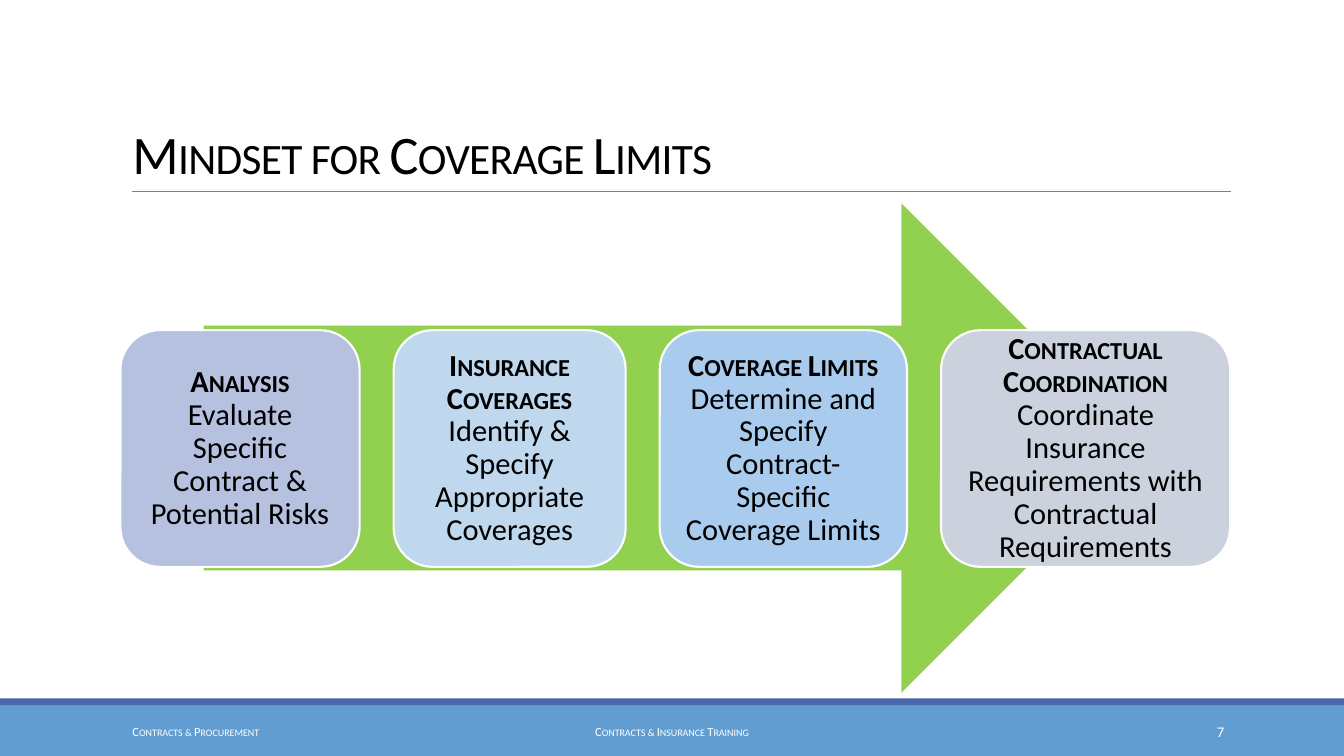
from dataclasses import dataclass

from lxml import etree
from pptx import Presentation
from pptx.dml.color import RGBColor
from pptx.enum.shapes import MSO_CONNECTOR, MSO_SHAPE
from pptx.enum.text import MSO_ANCHOR, PP_ALIGN
from pptx.oxml.ns import qn
from pptx.util import Cm, Pt

RECT, CARD, ARROW = MSO_SHAPE.RECTANGLE, MSO_SHAPE.ROUNDED_RECTANGLE, MSO_SHAPE.RIGHT_ARROW
STRAIGHT = MSO_CONNECTOR.STRAIGHT
LEFT, CENTER, RIGHT = PP_ALIGN.LEFT, PP_ALIGN.CENTER, PP_ALIGN.RIGHT
MIDDLE, BOTTOM = MSO_ANCHOR.MIDDLE, MSO_ANCHOR.BOTTOM


@dataclass(frozen=True)
class Theme:
    font: str = "Calibri"
    text: str = "000000"
    light: str = "FFFFFF"
    rule: str = "808080"
    arrow: str = "92D050"
    footer: str = "629DD1"
    stripe: str = "4A66AC"
    title_size: float = 32
    card_size: float = 18
    footer_size: float = 7.4
    number_size: float = 8.7


THEME = Theme()
SLIDE_W, SLIDE_H = 27.99, 15.75
CARDS_LEFT, CARDS_TOP, CARD_H, CARD_GAP = 2.51, 6.88, 4.93, 0.71

# width, fill, heading, body
STEPS = [
    (4.98, "B5C1DF", "Analysis", "Evaluate Specific Contract & Potential Risks"),
    (4.83, "C0D8ED", "Insurance Coverages", "Identify & Specify Appropriate Coverages"),
    (5.15, "A9CCEE", "Coverage Limits",
     "Determine and Specify Contract-Specific Coverage Limits"),
    (6.02, "CCD2DD", "Contractual Coordination",
     "Coordinate Insurance Requirements with Contractual Requirements"),
]

# left, width, text, alignment, size, small caps
FOOTERS = [
    (2.51, 5.66, "Contracts & Procurement", LEFT, THEME.footer_size, True),
    (8.46, 11.07, "Contracts & Insurance Training", CENTER, THEME.footer_size, True),
    (22.73, 3.02, "7", RIGHT, THEME.number_size, False),
]


def rgb(color):
    return RGBColor.from_string(color)


def set_font(font, size, color):
    font.name = THEME.font
    font.size = Pt(size)
    font.color.rgb = rgb(color)


def add_run(p, text, small_caps=False, bold=False, spacing=None):
    """Append a run; spacing is in hundredths of a point."""
    r = p.add_run()
    r.text = text
    r.font.bold = bold
    props = r.font._element
    if small_caps:
        props.set("cap", "small")
    if spacing is not None:
        props.set("spc", str(spacing))


def add_block(slide, kind, left, top, width, height, fill):
    sp = slide.shapes.add_shape(kind, Cm(left), Cm(top), Cm(width), Cm(height))
    sp.shadow.inherit = False
    sp.fill.solid()
    sp.fill.fore_color.rgb = rgb(fill)
    sp.line.fill.background()
    return sp


def add_label(slide, left, top, width, height, anchor, align, size, color):
    """Add an empty text box and return its styled paragraph."""
    box = slide.shapes.add_textbox(Cm(left), Cm(top), Cm(width), Cm(height))
    tf = box.text_frame
    tf.word_wrap = True
    tf.vertical_anchor = anchor
    p = tf.paragraphs[0]
    p.alignment = align
    set_font(p.font, size, color)
    return p


def add_rule(slide, left, right, y):
    line = slide.shapes.add_connector(STRAIGHT, Cm(left), Cm(y), Cm(right), Cm(y))
    line.line.color.rgb = rgb(THEME.rule)
    line.line.width = Pt(0.5)
    etree.SubElement(line._element.spPr, qn("a:effectLst"))


def add_card(slide, left, width, fill, heading, body):
    sp = add_block(slide, CARD, left, CARDS_TOP, width, CARD_H, fill)
    sp.line.color.rgb = rgb(THEME.light)
    sp.line.width = Pt(1.25)
    tf = sp.text_frame
    tf.word_wrap = True
    tf.vertical_anchor = MIDDLE
    tf.margin_left = tf.margin_right = tf.margin_top = tf.margin_bottom = Cm(0.18)
    p = tf.paragraphs[0]
    p.alignment = CENTER
    p.line_spacing = 0.9
    set_font(p.font, THEME.card_size, THEME.text)
    add_run(p, heading, small_caps=True, bold=True)
    p.add_line_break()
    add_run(p, body)


def add_title(slide, text):
    p = add_label(slide, 2.51, 0.66, 23.09, 3.33, BOTTOM, LEFT,
                  THEME.title_size, THEME.text)
    p.line_spacing = 0.85
    add_run(p, text, small_caps=True, spacing=-40)


def add_footer(slide):
    add_block(slide, RECT, 0, 14.7, SLIDE_W, 1.05, THEME.footer)
    add_block(slide, RECT, 0, 14.55, SLIDE_W, 0.15, THEME.stripe)
    for left, width, text, align, size, small_caps in FOOTERS:
        p = add_label(slide, left, 14.83, width, 0.84, MIDDLE, align, size, THEME.light)
        add_run(p, text, small_caps)


def add_process(slide):
    add_block(slide, ARROW, 4.24, 4.24, 19.63, 10.19, THEME.arrow)
    left = CARDS_LEFT
    for width, fill, heading, body in STEPS:
        add_card(slide, left, width, fill, heading, body)
        left += width + CARD_GAP


def main():
    prs = Presentation()
    prs.slide_width, prs.slide_height = Cm(SLIDE_W), Cm(SLIDE_H)
    slide = prs.slides.add_slide(prs.slide_layouts[6])
    add_footer(slide)
    add_rule(slide, 2.74, 25.63, 3.99)
    add_title(slide, "Mindset for Coverage Limits")
    add_process(slide)
    prs.save("out.pptx")


if __name__ == "__main__":
    main()
